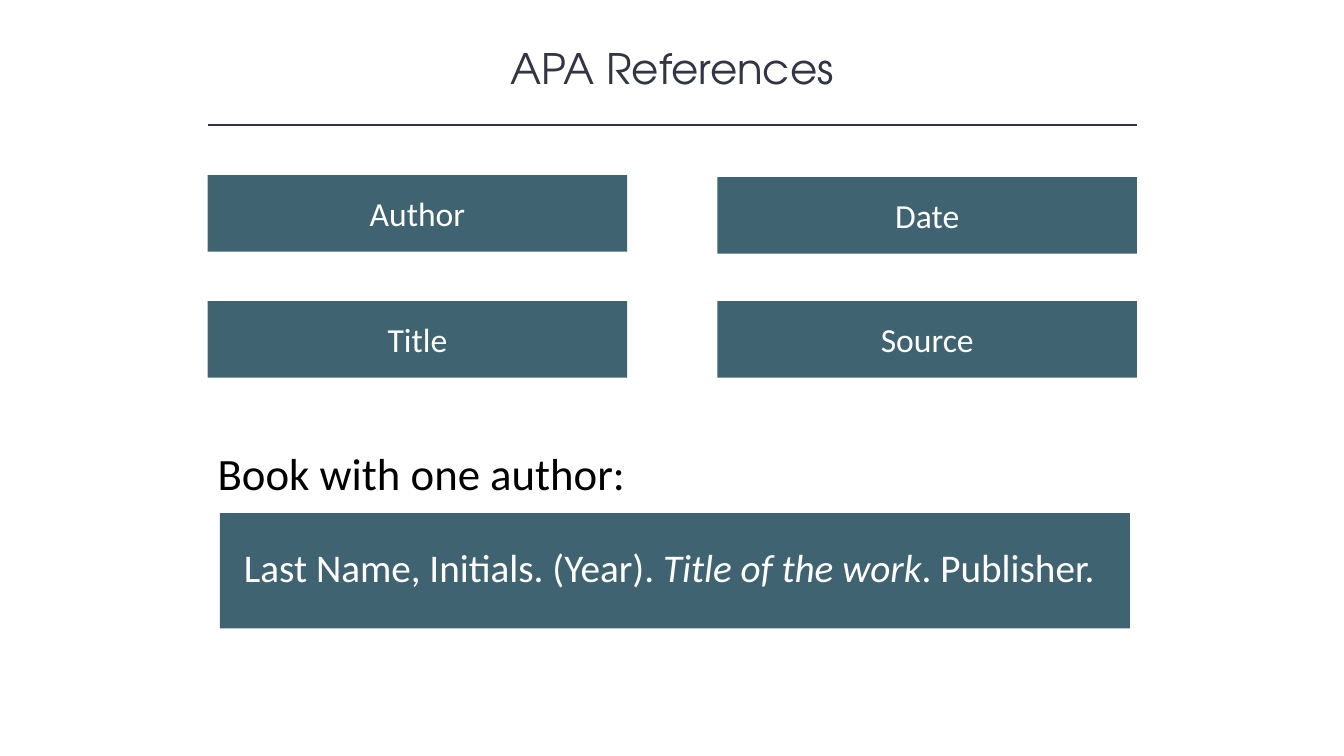
from pptx import Presentation
from pptx.dml.color import RGBColor
from pptx.enum.shapes import MSO_CONNECTOR, MSO_SHAPE
from pptx.enum.text import MSO_ANCHOR, PP_ALIGN
from pptx.oxml.ns import qn
from pptx.util import Pt
from lxml.etree import SubElement

COLORS = {"teal": "3F6371", "ink": "323542", "white": "FFFFFF", "black": "000000"}
BODY_FONT = "Calibri"
TITLE_FONT = "TeX Gyre Adventor"

LEFT, RIGHT = 148.4, 812.1
BOX_WIDTH, BOX_HEIGHT = 299.6, 54.6
# Each reference part with its column (0 or 1) and top edge
REFERENCE_PARTS = [
    ("Author", 0, 125.2),
    ("Date", 1, 126.6),
    ("Title", 0, 215.2),
    ("Source", 1, 215.2),
]
# Runs of the citation pattern: text, italic
CITATION = [
    ("Last Name, Initials. (Year). ", False),
    ("Title of the work", True),
    (". Publisher.", False),
]


def rgb(name):
    return RGBColor.from_string(COLORS[name])


def write(shape, runs, size, color, font=BODY_FONT, align=PP_ALIGN.LEFT,
          anchor=MSO_ANCHOR.TOP):
    """Fill a shape with one paragraph made of (text, italic) runs."""
    frame = shape.text_frame
    frame.word_wrap = True
    frame.vertical_anchor = anchor
    paragraph = frame.paragraphs[0]
    paragraph.alignment = align
    for text, italic in runs:
        run = paragraph.add_run()
        run.text = text
        run.font.size = Pt(size)
        run.font.name = font
        run.font.italic = italic
        run.font.color.rgb = rgb(color)


def add_heading(slide, text):
    heading = slide.shapes.title
    heading.left, heading.top = Pt(120), Pt(26.6)
    heading.width, heading.height = Pt(720), Pt(43.9)
    write(heading, [(text, False)], size=30, color="ink", font=TITLE_FONT,
          align=PP_ALIGN.CENTER, anchor=MSO_ANCHOR.MIDDLE)


def add_rule(slide, y):
    rule = slide.shapes.add_connector(
        MSO_CONNECTOR.STRAIGHT, Pt(LEFT), Pt(y), Pt(RIGHT), Pt(y))
    rule.line.color.rgb = rgb("ink")
    rule.line.width = Pt(1)
    SubElement(rule.element.spPr, qn("a:effectLst"))


def add_box(slide, left, top, width, height):
    box = slide.shapes.add_shape(
        MSO_SHAPE.RECTANGLE, Pt(left), Pt(top), Pt(width), Pt(height))
    box.shadow.inherit = False
    box.fill.solid()
    box.fill.fore_color.rgb = rgb("teal")
    box.line.fill.background()
    return box


def add_label(slide, left, top, width, height, runs, **text_format):
    label = slide.shapes.add_textbox(Pt(left), Pt(top), Pt(width), Pt(height))
    write(label, runs, **text_format)


def main():
    presentation = Presentation()
    presentation.slide_width, presentation.slide_height = Pt(960), Pt(540)
    slide = presentation.slides.add_slide(presentation.slide_layouts[5])

    # Heading with rule
    add_heading(slide, "APA References")
    add_rule(slide, 89.4)

    # Four parts of a reference
    for name, column, top in REFERENCE_PARTS:
        left = RIGHT - BOX_WIDTH if column else LEFT
        part = add_box(slide, left, top, BOX_WIDTH, BOX_HEIGHT)
        write(part, [(name, False)], size=24, color="white",
              align=PP_ALIGN.CENTER, anchor=MSO_ANCHOR.MIDDLE)

    # Example citation
    add_label(slide, LEFT, 314.6, 334, 46, [("Book with one author:", False)],
              size=32, color="black", align=PP_ALIGN.JUSTIFY)
    add_box(slide, 157.1, 366.5, 650, 82.4)
    add_label(slide, 167.2, 384.5, 625.7, 41.2, CITATION, size=28, color="white")

    presentation.save("out.pptx")


if __name__ == "__main__":
    main()
